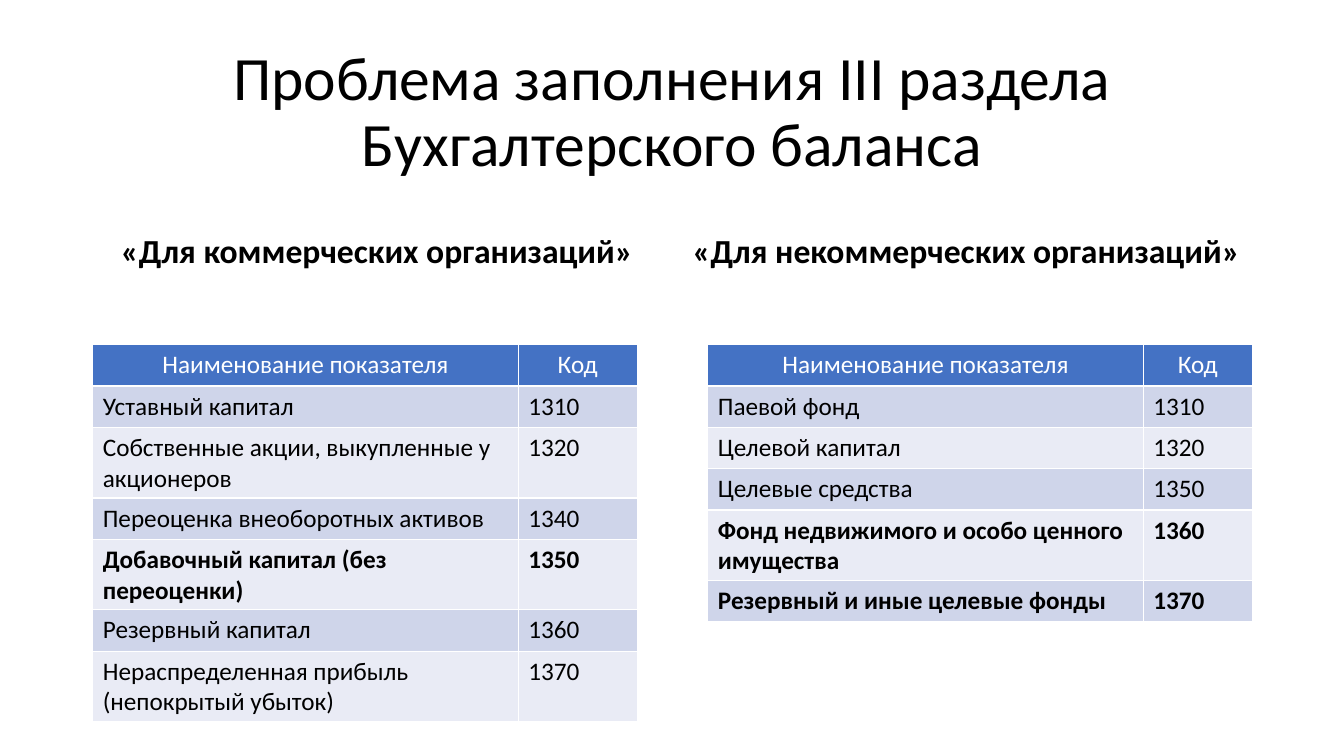
from dataclasses import dataclass

from pptx import Presentation
from pptx.dml.color import RGBColor
from pptx.enum.text import MSO_ANCHOR, PP_ALIGN
from pptx.util import Inches, Pt

CENTER, LEFT = PP_ALIGN.CENTER, PP_ALIGN.LEFT
MIDDLE, BOTTOM = MSO_ANCHOR.MIDDLE, MSO_ANCHOR.BOTTOM


@dataclass(frozen=True)
class Theme:
    font: str = "Calibri"
    text: str = "000000"
    header_text: str = "FFFFFF"
    header_fill: str = "4472C4"
    bands: tuple = ("CFD5EA", "E9EBF5")
    title_size: int = 44
    heading_size: int = 24
    table_size: int = 18


THEME = Theme()
TITLE = "Проблема заполнения III раздела Бухгалтерского баланса"
HEADER = ("Наименование показателя", "Код")
TABLE_TOP = 3.42
ROW_HEIGHT = 0.41

SECTIONS = [
    {
        "heading": "«Для коммерческих организаций»",
        "heading_box": (0.92, 1.84, 5.64, 0.9),
        "table_left": 0.92,
        "columns": (4.22, 1.18),
        "rows": [
            ("Уставный капитал", "1310"),
            ("Собственные акции, выкупленные у акционеров", "1320"),
            ("Переоценка внеоборотных активов", "1340"),
            ("Добавочный капитал (без переоценки)", "1350"),
            ("Резервный капитал", "1360"),
            ("Нераспределенная прибыль (непокрытый убыток)", "1370"),
        ],
        "bold_codes": {"1350"},
    },
    {
        "heading": "«Для некоммерческих организаций»",
        "heading_box": (6.75, 1.84, 5.67, 0.9),
        "table_left": 7.02,
        "columns": (4.32, 1.08),
        "rows": [
            ("Паевой фонд", "1310"),
            ("Целевой капитал", "1320"),
            ("Целевые средства", "1350"),
            ("Фонд недвижимого и особо ценного имущества", "1360"),
            ("Резервный и иные целевые фонды", "1370"),
        ],
        "bold_codes": {"1360", "1370"},
    },
]


def set_attributes(target, values):
    for name, value in values.items():
        setattr(target, name, value)


def write_text(tf, text, size, color=THEME.text, bold=False, **paragraph):
    p = tf.paragraphs[0]
    set_attributes(p, paragraph)
    r = p.add_run()
    r.text = text
    set_attributes(r.font, {"name": THEME.font, "size": Pt(size), "bold": bold})
    r.font.color.rgb = RGBColor.from_string(color)


def add_text(s, box, text, size, anchor, bold=False):
    tf = s.shapes.add_textbox(*map(Inches, box)).text_frame
    set_attributes(tf, {"word_wrap": True, "vertical_anchor": anchor})
    write_text(tf, text, size, bold=bold, alignment=CENTER, line_spacing=0.9)


def fill_row(table, index, texts, fill, color, bold, alignment):
    table.rows[index].height = Inches(ROW_HEIGHT)
    for column, text in enumerate(texts):
        cell = table.cell(index, column)
        cell.fill.solid()
        cell.fill.fore_color.rgb = RGBColor.from_string(fill)
        write_text(cell.text_frame, text, THEME.table_size, color, bold,
                   alignment=alignment)


def add_indicator_table(s, left, columns, rows, bold_codes):
    count = len(rows) + 1
    table = s.shapes.add_table(
        count, len(columns), Inches(left), Inches(TABLE_TOP),
        Inches(sum(columns)), Inches(count * ROW_HEIGHT)).table
    for column, width in zip(table.columns, columns):
        column.width = Inches(width)
    fill_row(table, 0, HEADER, THEME.header_fill, THEME.header_text, False, CENTER)
    for i, row in enumerate(rows):
        fill = THEME.bands[i % len(THEME.bands)]
        fill_row(table, i + 1, row, fill, THEME.text, row[1] in bold_codes, LEFT)


def main():
    prs = Presentation()
    set_attributes(prs, {"slide_width": Inches(13.33), "slide_height": Inches(7.5)})
    s = prs.slides.add_slide(prs.slide_layouts[6])
    add_text(s, (0.92, 0.4, 11.5, 1.45), TITLE, THEME.title_size, MIDDLE)
    for section in SECTIONS:
        add_text(s, section["heading_box"], section["heading"],
                 THEME.heading_size, BOTTOM, bold=True)
        add_indicator_table(s, section["table_left"], section["columns"],
                            section["rows"], section["bold_codes"])
    prs.save("out.pptx")


if __name__ == "__main__":
    main()
